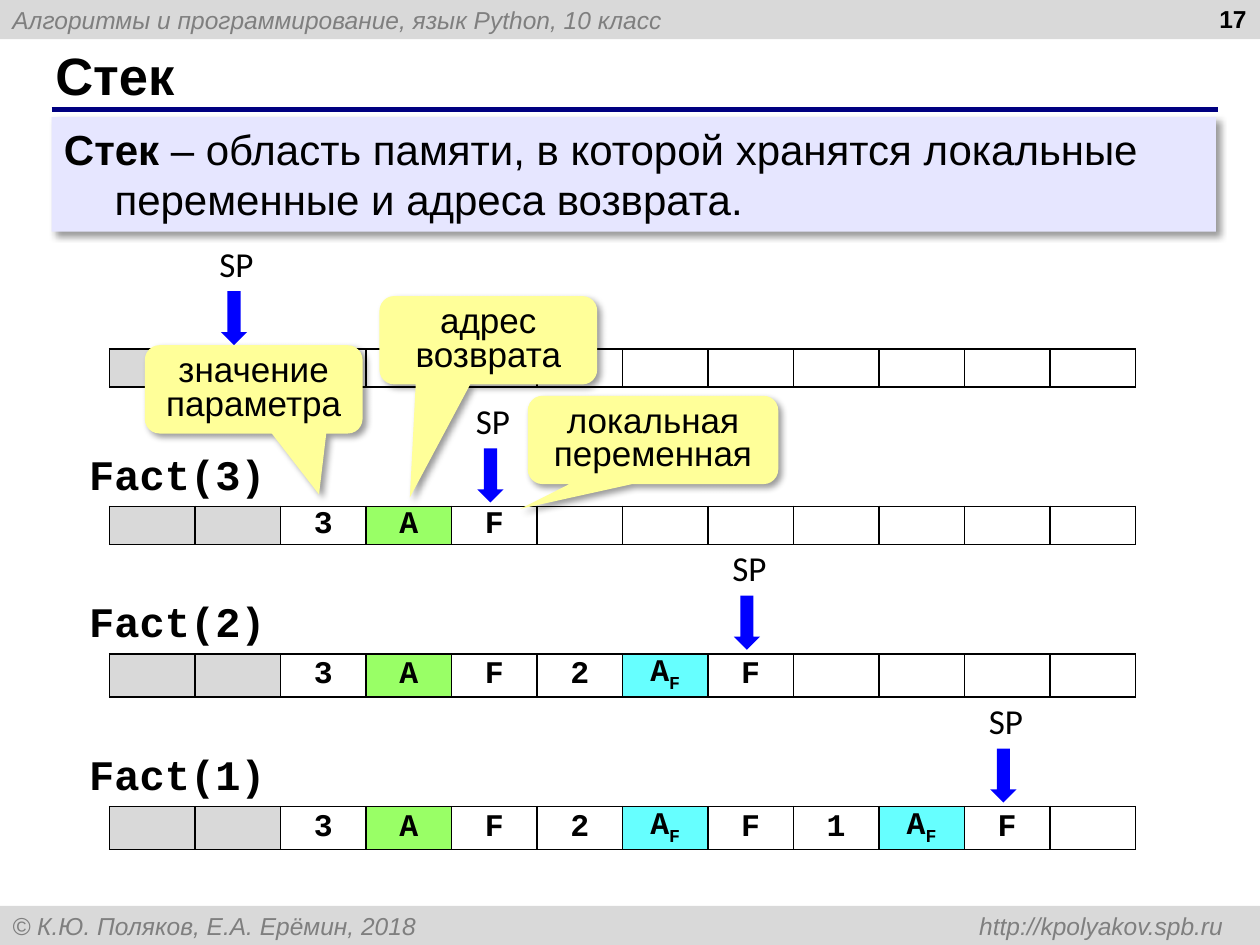
from dataclasses import dataclass

from lxml.etree import SubElement
from pptx import Presentation
from pptx.dml.color import RGBColor
from pptx.enum.shapes import MSO_CONNECTOR, MSO_SHAPE as Preset
from pptx.enum.text import MSO_ANCHOR as Anchor, PP_ALIGN as Align
from pptx.oxml.ns import qn
from pptx.util import Cm, Pt


@dataclass(frozen=True)
class Theme:
    black: str = "000000"
    bar: str = "D9D9D9"
    bar_text: str = "7F7F7F"
    rule: str = "000080"
    definition: str = "E6E6FF"
    pointer: str = "0000FF"
    callout: str = "FFFF99"
    used: str = "D9D9D9"
    address: str = "99FF66"
    inner_address: str = "66FFFF"
    sans: str = "Arial"
    mono: str = "Courier New"
    label: str = "Calibri"
    title_size: int = 30
    body_size: int = 24
    label_size: int = 20
    cell_size: int = 18
    small_size: int = 14


theme = Theme()


def write(frame, *runs, size, font=theme.sans, color=theme.black, bold=False, italic=False,
          align=Align.LEFT, anchor=Anchor.TOP, wrap=True, inset=None, spacing=None, after=None):
    """Write runs, each a string or a (string, bold, baseline) tuple, as one paragraph."""
    frame.word_wrap = wrap
    frame.vertical_anchor = anchor
    if inset is not None:
        frame.margin_left = frame.margin_right = frame.margin_top = frame.margin_bottom = inset
    paragraph = frame.paragraphs[0]
    paragraph.alignment = align
    if spacing:
        paragraph.line_spacing = spacing
    if after:
        paragraph.space_after = Pt(after)
    for item in runs:
        text, run_bold, baseline = (item, bold, 0) if isinstance(item, str) else item
        run = paragraph.add_run()
        run.text = text
        run.font.name, run.font.size = font, Pt(size)
        run.font.bold, run.font.italic = run_bold, italic
        run.font.color.rgb = RGBColor.from_string(color)
        if baseline:
            run.font._element.set("baseline", str(baseline))
    return paragraph


def add_box(shapes, preset, fill, left, top, width, height, shadow=False):
    """Add a filled shape without an outline; lengths are in centimetres."""
    shape = shapes.add_shape(preset, Cm(left), Cm(top), Cm(width), Cm(height))
    shape.fill.solid()
    shape.fill.fore_color.rgb = RGBColor.from_string(fill)
    shape.line.fill.background()
    shape.shadow.inherit = False
    if shadow:
        effects = shape._element.spPr.find(qn("a:effectLst"))
        outer = SubElement(effects, qn("a:outerShdw"), blurRad=str(Pt(4)), dist=str(Pt(3)),
                           dir="2700000", algn="tl", rotWithShape="0")
        color = SubElement(outer, qn("a:srgbClr"), val=theme.black)
        SubElement(color, qn("a:alpha"), val="40000")
    return shape


presentation = Presentation()
presentation.slide_width, presentation.slide_height = Cm(25.4), Cm(19.05)
slide = presentation.slides.add_slide(presentation.slide_layouts[5])
shapes = slide.shapes

# Header and footer bars
bars = [(0, "Алгоритмы и программирование, язык Python, 10 класс"),
        (18.26, "© К.Ю. Поляков, Е.А. Ерёмин, 2018 \thttp://kpolyakov.spb.ru")]
for top, text in bars:
    bar = add_box(shapes, Preset.RECTANGLE, theme.bar, 0, top, 25.4, 0.79)
    paragraph = write(bar.text_frame, text, size=theme.small_size, color=theme.bar_text,
                      italic=True, anchor=Anchor.MIDDLE)
    tabs = SubElement(paragraph._p.get_or_add_pPr(), qn("a:tabLst"))
    SubElement(tabs, qn("a:tab"), pos=str(Cm(24.41)), algn="r")

page_number = shapes.add_textbox(Cm(19.46), Cm(-0.05), Cm(5.92), Cm(1.32))
write(page_number.text_frame, "17", size=theme.small_size, bold=True, align=Align.RIGHT)

# Title and definition
title = shapes.title
title.left, title.top, title.width, title.height = Cm(0.86), Cm(0.84), Cm(23.27), Cm(1.32)
write(title.text_frame, "Стек", size=theme.title_size, bold=True, anchor=Anchor.MIDDLE)

rule = shapes.add_connector(MSO_CONNECTOR.STRAIGHT, Cm(1.04), Cm(2.21), Cm(24.56), Cm(2.21))
rule.line.color.rgb = RGBColor.from_string(theme.rule)
rule.line.width = Pt(3)
SubElement(rule._element.spPr, qn("a:effectLst"))

definition = add_box(shapes, Preset.RECTANGLE, theme.definition, 1.04, 2.36, 23.47, 2.31, shadow=True)
paragraph = write(definition.text_frame, ("Стек ", True, 0),
                  "– область памяти, в которой хранятся локальные переменные и адреса возврата.",
                  size=theme.body_size)
properties = paragraph._p.get_or_add_pPr()
properties.set("marL", str(Cm(1.02)))
properties.set("indent", str(Cm(-1.02)))

# Stack states: table top, call, cell values, slot the stack pointer shows
SLOTS = 12
stack_left, stack_width = 2.21, 20.68
slot_width = stack_width / SLOTS
states = [(7.04, None, [], 1),
          (10.21, "Fact(3)", ["3", "A", "F"], 4),
          (13.18, "Fact(2)", ["3", "A", "F", "2", "AF", "F"], 7),
          (16.26, "Fact(1)", ["3", "A", "F", "2", "AF", "F", "1", "AF", "F"], 10)]
cell_fills = {"used": theme.used, "A": theme.address, "AF": theme.inner_address}

for top, call, values, pointer_slot in states:
    table = shapes.add_table(1, SLOTS, Cm(stack_left), Cm(top), Cm(stack_width), Cm(0.76)).table
    table.first_row = table.horz_banding = False
    contents = ["used", "used"] + values
    contents += [""] * (SLOTS - len(contents))
    for cell, content in zip(table.rows[0].cells, contents):
        cell.margin_left = cell.margin_right = cell.margin_top = cell.margin_bottom = 0
        cell.vertical_anchor = Anchor.MIDDLE
        cell_properties = cell._tc.get_or_add_tcPr()
        for side in ("lnL", "lnR", "lnT", "lnB"):
            border = SubElement(cell_properties, qn(f"a:{side}"), w=str(Pt(1)))
            border_fill = SubElement(border, qn("a:solidFill"))
            SubElement(border_fill, qn("a:srgbClr"), val=theme.black)
        if content in cell_fills:
            cell.fill.solid()
            cell.fill.fore_color.rgb = RGBColor.from_string(cell_fills[content])
        else:
            cell.fill.background()
        text = "" if content == "used" else content
        runs = ["A", ("F", True, -25000)] if text == "AF" else [text]
        write(cell.text_frame, *runs, size=theme.cell_size, font=theme.mono, bold=True,
              align=Align.CENTER, anchor=Anchor.MIDDLE)

    pointer = shapes.add_group_shape()
    pointer_left = stack_left + pointer_slot * slot_width + 0.25
    label = pointer.shapes.add_textbox(Cm(pointer_left), Cm(top - 2.16), Cm(1.17), Cm(1.09))
    write(label.text_frame, "SP", size=theme.label_size, font=theme.label,
          align=Align.CENTER, inset=0, after=10)
    add_box(pointer.shapes, Preset.DOWN_ARROW, theme.pointer, pointer_left + 0.27, top - 1.17, 0.53, 1.09)

    if call:
        call_label = shapes.add_textbox(Cm(1.55), Cm(top - 1.3), Cm(4.09), Cm(1.3))
        write(call_label.text_frame, call, size=theme.body_size, font=theme.mono, bold=True, wrap=False)

# Callouts: text, left, top, width, tip offset from the centre
callouts = [("значение параметра", 2.92, 6.96, 4.39, 0.3, 1.19),
            ("адрес возврата", 7.65, 5.97, 4.39, -0.36, 1.78),
            ("локальная переменная", 10.64, 7.98, 5.05, -0.53, 0.78)]
for text, left, top, width, tip_x, tip_y in callouts:
    callout = add_box(shapes, Preset.ROUNDED_RECTANGULAR_CALLOUT, theme.callout,
                      left, top, width, 1.78, shadow=True)
    callout.adjustments[0], callout.adjustments[1] = tip_x, tip_y
    write(callout.text_frame, text, size=theme.label_size, align=Align.CENTER,
          anchor=Anchor.MIDDLE, spacing=0.8)

presentation.save("out.pptx")
